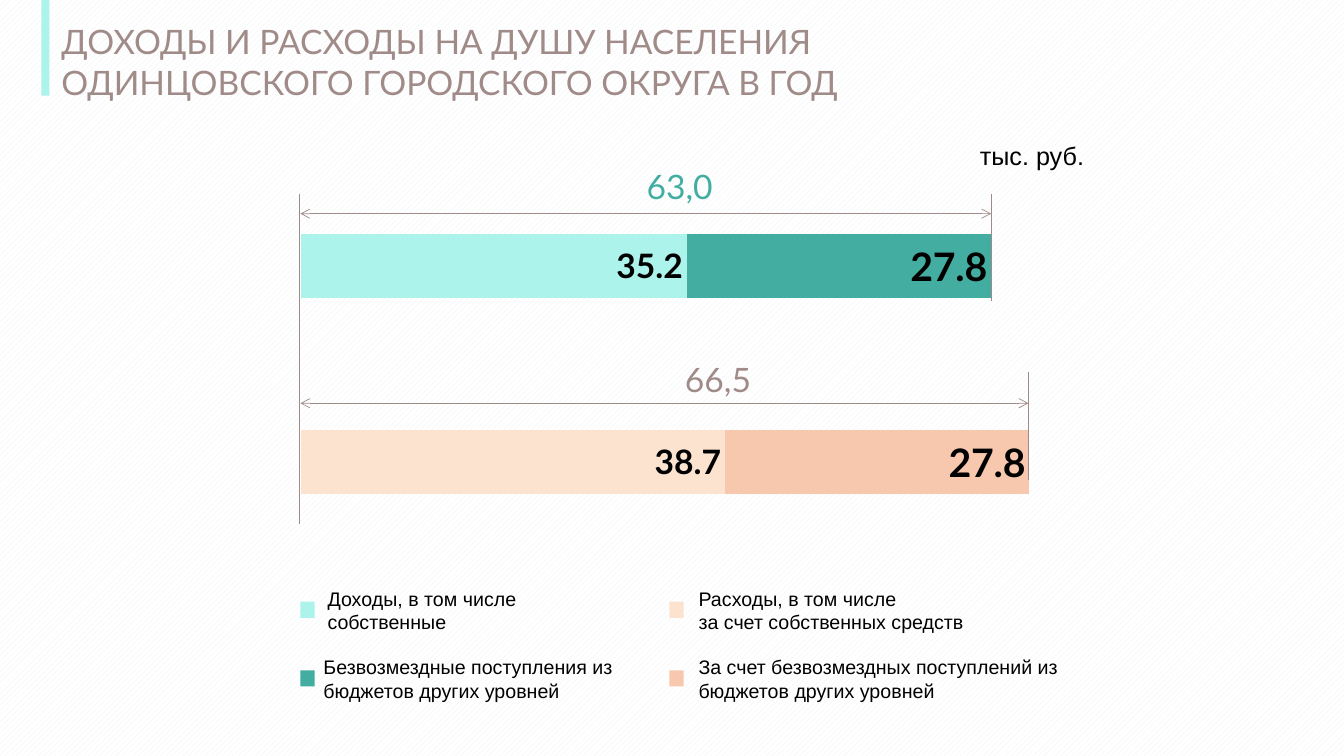
from lxml.etree import SubElement
from pptx import Presentation
from pptx.chart.data import CategoryChartData
from pptx.dml.color import RGBColor
from pptx.enum.chart import XL_CHART_TYPE, XL_LABEL_POSITION
from pptx.enum.dml import MSO_PATTERN
from pptx.enum.shapes import MSO_CONNECTOR, MSO_SHAPE
from pptx.enum.text import MSO_ANCHOR, MSO_AUTO_SIZE, PP_ALIGN
from pptx.oxml import parse_xml
from pptx.oxml.ns import nsdecls, qn
from pptx.util import Inches, Pt

COLORS = {
    "mint": "ACF3EB",
    "teal": "43ADA1",
    "cream": "FCE3CF",
    "peach": "F7C8AE",
    "taupe": "A08B88",
    "black": "000000",
    "white": "FFFFFF",
    "stripe": "ECF2F4",
}
TIGHT = (0, 0, 0.1, 0.05)
NORMAL = (0.1, 0.05, 0.1, 0.05)


def color(name):
    return RGBColor.from_string(COLORS[name])


class SlideBuilder:
    def __init__(self, deck):
        self.page = deck.slides.add_slide(deck.slide_layouts[5])
        self.shapes = self.page.shapes

    def background(self, front, back):
        fill = self.page.background.fill
        fill.patterned()
        fill.pattern = MSO_PATTERN.WIDE_UPWARD_DIAGONAL
        fill.fore_color.rgb = color(front)
        fill.back_color.rgb = color(back)

    def fill_text(self, box, lines, size, font, tint, align, insets, wrap=True):
        frame = box.text_frame
        frame.text = "\n".join(lines)
        frame.word_wrap = wrap
        frame.auto_size = MSO_AUTO_SIZE.NONE
        frame.vertical_anchor = MSO_ANCHOR.TOP
        (frame.margin_left, frame.margin_top,
         frame.margin_right, frame.margin_bottom) = map(Inches, insets)
        for para in frame.paragraphs:
            para.alignment = align
            for span in para.runs:
                span.font.size = Pt(size)
                span.font.name = font
                span.font.color.rgb = color(tint)

    def title(self, text, left, top, width, height):
        box = self.shapes.title
        box.left, box.top = Inches(left), Inches(top)
        box.width, box.height = Inches(width), Inches(height)
        self.fill_text(box, [text], 24, "Lato", "taupe", PP_ALIGN.LEFT, TIGHT)

    def text(self, lines, left, top, width, height, size=14, font="Arial",
             tint="black", align=PP_ALIGN.LEFT, insets=NORMAL, wrap=True):
        box = self.shapes.add_textbox(
            Inches(left), Inches(top), Inches(width), Inches(height))
        self.fill_text(box, lines, size, font, tint, align, insets, wrap)

    def block(self, left, top, width, height, tint):
        shape = self.shapes.add_shape(
            MSO_SHAPE.RECTANGLE,
            Inches(left), Inches(top), Inches(width), Inches(height))
        shape.shadow.inherit = False
        shape.fill.solid()
        shape.fill.fore_color.rgb = color(tint)
        shape.line.fill.background()

    def line(self, x1, y1, x2, y2, arrows=False):
        connector = self.shapes.add_connector(
            MSO_CONNECTOR.STRAIGHT,
            Inches(x1), Inches(y1), Inches(x2), Inches(y2))
        connector.line.color.rgb = color("taupe")
        connector.line.width = Pt(0.5)
        properties = connector._element.spPr
        if arrows:
            outline = properties.find(qn("a:ln"))
            for end in ("a:headEnd", "a:tailEnd"):
                SubElement(outline, qn(end), type="arrow")
        SubElement(properties, qn("a:effectLst"))

    def stacked_bars(self, left, top, width, height, categories, series, layout):
        data = CategoryChartData(number_format="0.0")
        data.categories = categories
        for name, values, _, _ in series:
            data.add_series(name, values)
        chart = self.shapes.add_chart(
            XL_CHART_TYPE.BAR_STACKED, Inches(left), Inches(top),
            Inches(width), Inches(height), data).chart
        chart.has_legend = False
        chart.has_title = False
        chart.font.size = Pt(10)
        chart.font.name = "Calibri"
        chart.font.color.rgb = color("black")
        chart.value_axis.minimum_scale = 0
        chart.value_axis.maximum_scale = 70
        chart.value_axis.has_major_gridlines = False
        chart.value_axis.visible = False
        chart.category_axis.visible = False
        plot = chart.plots[0]
        plot.gap_width = 52
        plot.overlap = 100
        plot.vary_by_categories = False
        for bars, (_, _, tints, size) in zip(plot.series, series):
            for index, tint in tints.items():
                fill = bars.points[index].format.fill
                fill.solid()
                fill.fore_color.rgb = color(tint)
            labels = bars.data_labels
            labels.show_value = True
            labels.number_format = "0.0"
            labels.number_format_is_linked = False
            labels.position = XL_LABEL_POSITION.INSIDE_END
            labels.font.size = Pt(size)
            labels.font.bold = True
            labels.font.name = "Lato"
            labels.font.color.rgb = color("black")
        self.place_plot(chart, layout)

    def place_plot(self, chart, layout):
        area = chart._chartSpace.find(".//" + qn("c:plotArea"))
        for old in area.findall(qn("c:layout")):
            area.remove(old)
        sizes = "".join(
            f'<c:{key} val="{value}"/>' for key, value in zip("xywh", layout))
        area.insert(0, parse_xml(
            f'<c:layout {nsdecls("c")}><c:manualLayout>'
            '<c:layoutTarget val="inner"/>'
            '<c:xMode val="edge"/><c:yMode val="edge"/>'
            f'{sizes}</c:manualLayout></c:layout>'))


def main():
    deck = Presentation()
    deck.slide_width, deck.slide_height = Inches(13.33), Inches(7.5)
    slide = SlideBuilder(deck)
    slide.background("stripe", "white")
    slide.title("ДОХОДЫ И РАСХОДЫ НА ДУШУ НАСЕЛЕНИЯ "
                "ОДИНЦОВСКОГО ГОРОДСКОГО ОКРУГА В ГОД", 0.61, 0.21, 8.42, 0.86)
    slide.block(0.41, 0, 0.08, 0.95, "mint")

    slide.stacked_bars(
        2.83, 2.09, 7.92, 3.04, ["1", "2", "3"],
        [("Series 1", (38.7, None, 35.2), {0: "cream", 2: "mint"}, 24),
         ("Series 2", (27.8, None, 27.8), {0: "peach", 2: "teal"}, 28)],
        (0.02, 0.02, 0.96, 0.96))

    slide.line(2.97, 1.92, 2.97, 5.2)
    slide.text(["тыс. руб."], 9.61, 1.34, 1.25, 0.4, size=18,
               align=PP_ALIGN.CENTER, wrap=False)
    totals = [("63,0", "teal", 9.83, 1.92, 2.12, 6.41, 1.65),
              ("66,5", "taupe", 10.2, 3.69, 4, 6.79, 3.56)]
    for total, tint, right, top, arrow, left, label_top in totals:
        slide.line(right, top, right, top + 1.07)
        slide.line(right, arrow, 2.98, arrow, arrows=True)
        slide.text([total], left, label_top, 0.76, 0.45, size=24, font="Lato",
                   tint=tint, align=PP_ALIGN.CENTER, insets=TIGHT)

    legend = [
        ("mint", 2.98, 5.97, 3.15, 3.11, ["Доходы, в том числе", "собственные"]),
        ("teal", 2.98, 6.65, 3.11, 3.11,
         ["Безвозмездные поступления из бюджетов других уровней"]),
        ("cream", 6.64, 5.97, 6.83, 3.72,
         ["Расходы, в том числе", "за счет собственных средств"]),
        ("peach", 6.64, 6.65, 6.83, 4.03,
         ["За счет безвозмездных поступлений из бюджетов других уровней"]),
    ]
    for tint, marker, top, left, width, lines in legend:
        slide.block(marker, top, 0.14, 0.16, tint)
        slide.text(lines, left, top - 0.2, width, 0.57)

    deck.save("out.pptx")


if __name__ == "__main__":
    main()
